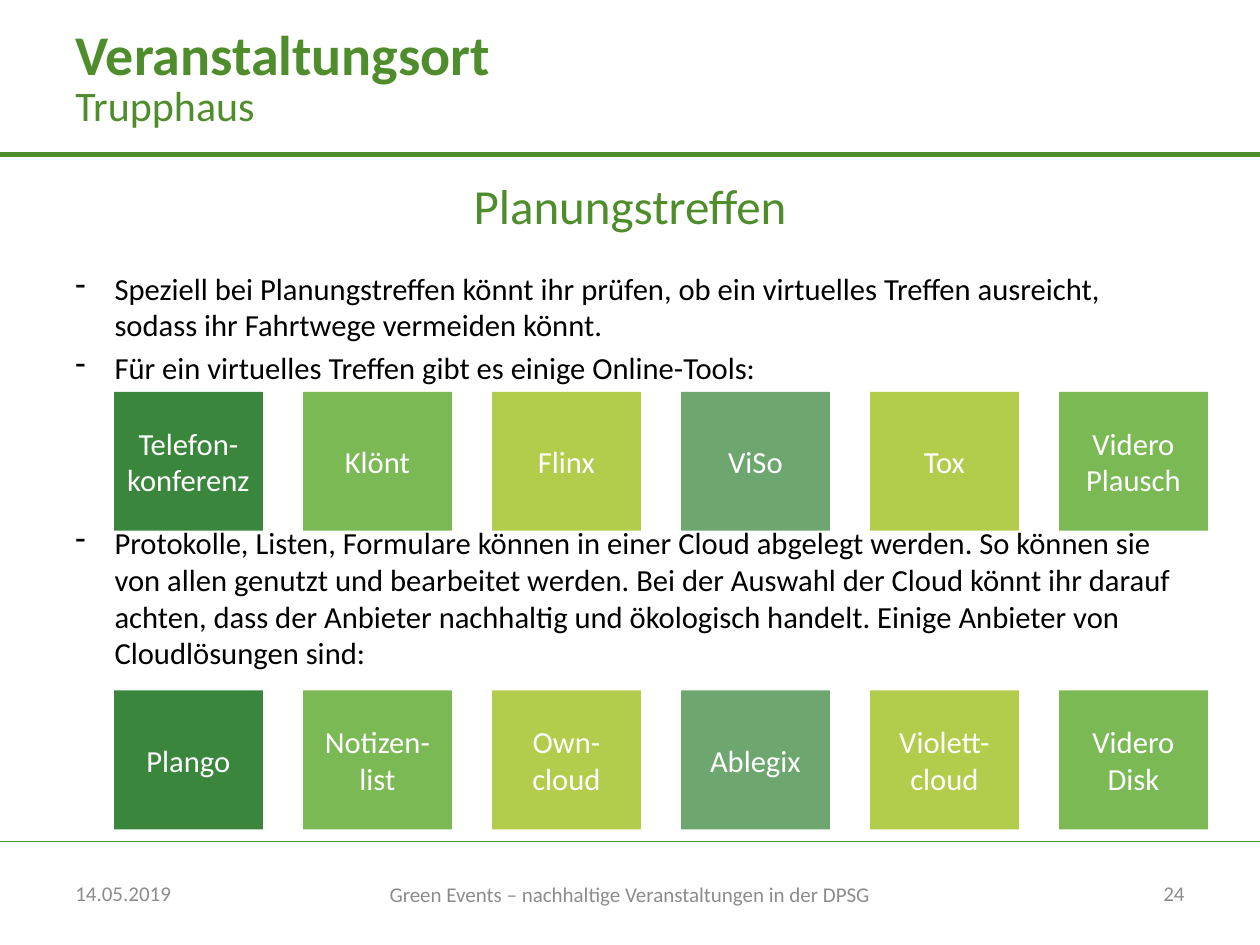
import pptx
import pptx.util
import pptx.dml.color
import pptx.enum.shapes
import pptx.enum.text
import pptx.oxml
import pptx.oxml.ns
from pptx.util import Cm

COLORS = {
    "heading": "4F8D2C",
    "footer": "8C8C8C",
    "body": "000000",
    "tile_text": "FFFFFF",
    "dark": "3A863C",
    "leaf": "7BB955",
    "lime": "B1CD4B",
    "sage": "6EA670",
}
TILE_COLORS = ["dark", "leaf", "lime", "sage", "lime", "leaf"]
MEETING_TOOLS = ["Telefon-konferenz", "Klönt", "Flinx", "ViSo", "Tox", "Videro Plausch"]
CLOUD_TOOLS = ["Plango", "Notizen-list", "Own-cloud", "Ablegix", "Violett-cloud", "Videro Disk"]
ADVICE = [
    ("Speziell bei Planungstreffen könnt ihr prüfen, ob ein virtuelles Treffen ausreicht, "
     "sodass ihr Fahrtwege vermeiden könnt.", 0),
    ("Für ein virtuelles Treffen gibt es einige Online-Tools:", 3.5),
    ("Protokolle, Listen, Formulare können in einer Cloud abgelegt werden. So können sie "
     "von allen genutzt und bearbeitet werden. Bei der Auswahl der Cloud könnt ihr darauf "
     "achten, dass der Anbieter nachhaltig und ökologisch handelt. Einige Anbieter von "
     "Cloudlösungen sind:", 79),
]
ALIGN = pptx.enum.text.PP_ALIGN
ANCHOR = pptx.enum.text.MSO_ANCHOR
BODY_SIZE = 17.5


def rgb(color):
    return pptx.dml.color.RGBColor.from_string(COLORS[color])


def format_runs(paragraph, size, color, bold=False):
    for run in paragraph.runs:
        run.font.name = "Calibri"
        run.font.size = pptx.util.Pt(size)
        run.font.bold = bold
        run.font.color.rgb = rgb(color)


def write_line(shape, text, size, color, align=ALIGN.LEFT, bold=False):
    frame = shape.text_frame
    frame.text = text
    frame.word_wrap = True
    frame.auto_size = pptx.enum.text.MSO_AUTO_SIZE.NONE
    frame.vertical_anchor = ANCHOR.MIDDLE
    frame.paragraphs[0].alignment = align
    format_runs(frame.paragraphs[0], size, color, bold)


def add_heading(slide, text):
    heading = slide.shapes.title
    heading.left, heading.top = Cm(1.27), Cm(0.03)
    heading.width, heading.height = Cm(16.94), Cm(2.08)
    write_line(heading, text, 32, "heading", bold=True)


def add_label(slide, box, text, size, color, align=ALIGN.LEFT):
    label = slide.shapes.add_textbox(*map(Cm, box))
    write_line(label, text, size, color, align)


def add_rule(slide, top, right, weight):
    rule = slide.shapes.add_connector(
        pptx.enum.shapes.MSO_CONNECTOR.STRAIGHT, 0, Cm(top), Cm(right), Cm(top))
    rule.line.color.rgb = rgb("heading")
    rule.line.width = pptx.util.Pt(weight)
    pptx.oxml.ns.qn("a:effectLst")
    rule._element.spPr.append(pptx.oxml.parse_xml(
        f'<a:effectLst {pptx.oxml.ns.nsdecls("a")}/>'))


def add_advice(slide):
    frame = slide.shapes.add_textbox(Cm(1.27), Cm(5.31), Cm(22.86), Cm(11.48)).text_frame
    frame.word_wrap = True
    for index, (text, gap) in enumerate(ADVICE):
        paragraph = frame.add_paragraph() if index else frame.paragraphs[0]
        paragraph.text = text
        paragraph.space_before = pptx.util.Pt(gap)
        properties = paragraph._p.get_or_add_pPr()
        properties.set("marL", str(Cm(0.79)))
        properties.set("indent", str(-Cm(0.79)))
        properties.append(pptx.oxml.parse_xml(
            f'<a:buChar {pptx.oxml.ns.nsdecls("a")} char="-"/>'))
        format_runs(paragraph, BODY_SIZE, "body")


def add_tile_row(slide, top, names):
    for index, (name, color) in enumerate(zip(names, TILE_COLORS)):
        tile = slide.shapes.add_shape(
            pptx.enum.shapes.MSO_SHAPE.RECTANGLE,
            Cm(2.3 + index * 3.81), Cm(top), Cm(3), Cm(2.8))
        tile.shadow.inherit = False
        tile.fill.solid()
        tile.fill.fore_color.rgb = rgb(color)
        tile.line.fill.background()
        write_line(tile, name, BODY_SIZE, "tile_text", ALIGN.CENTER)


def main():
    presentation = pptx.Presentation()
    presentation.slide_width, presentation.slide_height = Cm(25.4), Cm(19.05)
    slide = presentation.slides.add_slide(presentation.slide_layouts[5])

    add_rule(slide, 16.97, 25.4, 0.75)
    add_rule(slide, 3.12, 25.4, 3)
    add_heading(slide, "Veranstaltungsort")
    add_label(slide, (1.27, 1.52, 16.94, 1.2), "Trupphaus", 24, "heading")
    add_label(slide, (1.27, 3.33, 22.86, 1.6), "Planungstreffen", 28, "heading", ALIGN.CENTER)
    add_advice(slide)
    add_tile_row(slide, 7.9, MEETING_TOOLS)
    add_tile_row(slide, 13.92, CLOUD_TOOLS)
    add_label(slide, (1.27, 17.5, 5.93, 1.01), "14.05.2019", 12, "footer")
    add_label(slide, (7.6, 17.52, 10.2, 1.01),
              "Green Events – nachhaltige Veranstaltungen in der DPSG", 12, "footer", ALIGN.CENTER)
    add_label(slide, (18.2, 17.5, 5.93, 1.01), "24", 12, "footer", ALIGN.RIGHT)

    presentation.save("out.pptx")


if __name__ == "__main__":
    main()
